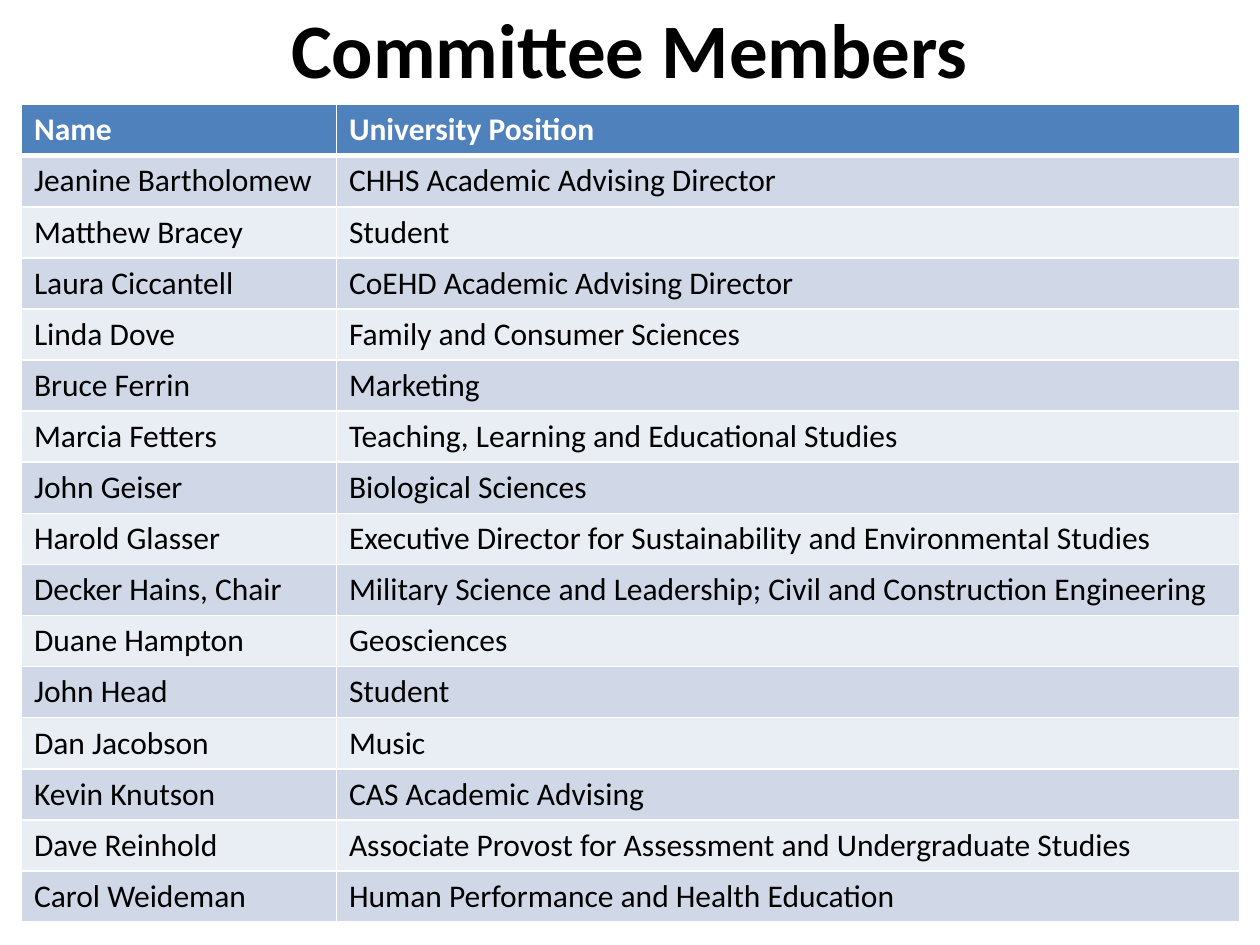
import pptx
import pptx.dml.color
import pptx.enum.text
import pptx.oxml.ns
import pptx.util
from lxml import etree
from pptx.util import Inches

TITLE = "Committee Members"
HEADER = ("Name", "University Position")
MEMBERS = [
    ("Jeanine Bartholomew", "CHHS Academic Advising Director"),
    ("Matthew Bracey", "Student"),
    ("Laura Ciccantell", "CoEHD Academic Advising Director"),
    ("Linda Dove", "Family and Consumer Sciences"),
    ("Bruce Ferrin", "Marketing"),
    ("Marcia Fetters", "Teaching, Learning and Educational Studies"),
    ("John Geiser", "Biological Sciences"),
    ("Harold Glasser", "Executive Director for Sustainability and Environmental Studies"),
    ("Decker Hains, Chair", "Military Science and Leadership; Civil and Construction Engineering"),
    ("Duane Hampton", "Geosciences"),
    ("John Head", "Student"),
    ("Dan Jacobson", "Music"),
    ("Kevin Knutson", "CAS Academic Advising"),
    ("Dave Reinhold", "Associate Provost for Assessment and Undergraduate Studies"),
    ("Carol Weideman", "Human Performance and Health Education"),
]
COLUMN_WIDTHS = (2.5, 7.17)
TABLE_HEIGHT = 6.49
HEADER_FILL = "4F81BD"
BAND_FILLS = ("D0D8E8", "E9EDF4")
WHITE, BLACK = "FFFFFF", "000000"


def color(value):
    return pptx.dml.color.RGBColor.from_string(value)


def format_text(frame, size, value, bold):
    for para in frame.paragraphs:
        for span in para.runs:
            span.font.name = "Calibri"
            span.font.size = pptx.util.Pt(size)
            span.font.bold = bold
            span.font.color.rgb = color(value)


def add_border(cell, side, width):
    qn = pptx.oxml.ns.qn
    properties = cell._tc.get_or_add_tcPr()
    line = etree.SubElement(properties, qn(f"a:ln{side}"), w=str(pptx.util.Pt(width)))
    fill = etree.SubElement(line, qn("a:solidFill"))
    etree.SubElement(fill, qn("a:srgbClr"), val=WHITE)


def add_title(page):
    box = page.shapes.add_textbox(Inches(0.5), Inches(-0.25), Inches(9), Inches(1.25))
    frame = box.text_frame
    frame.word_wrap = True
    frame.vertical_anchor = pptx.enum.text.MSO_ANCHOR.MIDDLE
    frame.text = TITLE
    frame.paragraphs[0].alignment = pptx.enum.text.PP_ALIGN.CENTER
    format_text(frame, 44, BLACK, True)


def add_members(page):
    rows = [HEADER] + MEMBERS
    table = page.shapes.add_table(
        len(rows), len(HEADER), Inches(0.17), Inches(0.83),
        Inches(sum(COLUMN_WIDTHS)), Inches(TABLE_HEIGHT),
    ).table
    for column, width in zip(table.columns, COLUMN_WIDTHS):
        column.width = Inches(width)
    for r, texts in enumerate(rows):
        is_header = r == 0
        for c, text in enumerate(texts):
            cell = table.cell(r, c)
            for side in "LRTB":
                thick = (is_header and side == "B") or (r == 1 and side == "T")
                add_border(cell, side, 3 if thick else 1)
            cell.fill.solid()
            cell.fill.fore_color.rgb = color(HEADER_FILL if is_header else BAND_FILLS[(r - 1) % 2])
            cell.text_frame.text = text
            format_text(cell.text_frame, 18, WHITE if is_header else BLACK, is_header)


def main():
    deck = pptx.Presentation()
    deck.slide_width, deck.slide_height = Inches(10), Inches(7.5)
    page = deck.slides.add_slide(deck.slide_layouts[6])
    add_title(page)
    add_members(page)
    deck.save("out.pptx")


if __name__ == "__main__":
    main()
